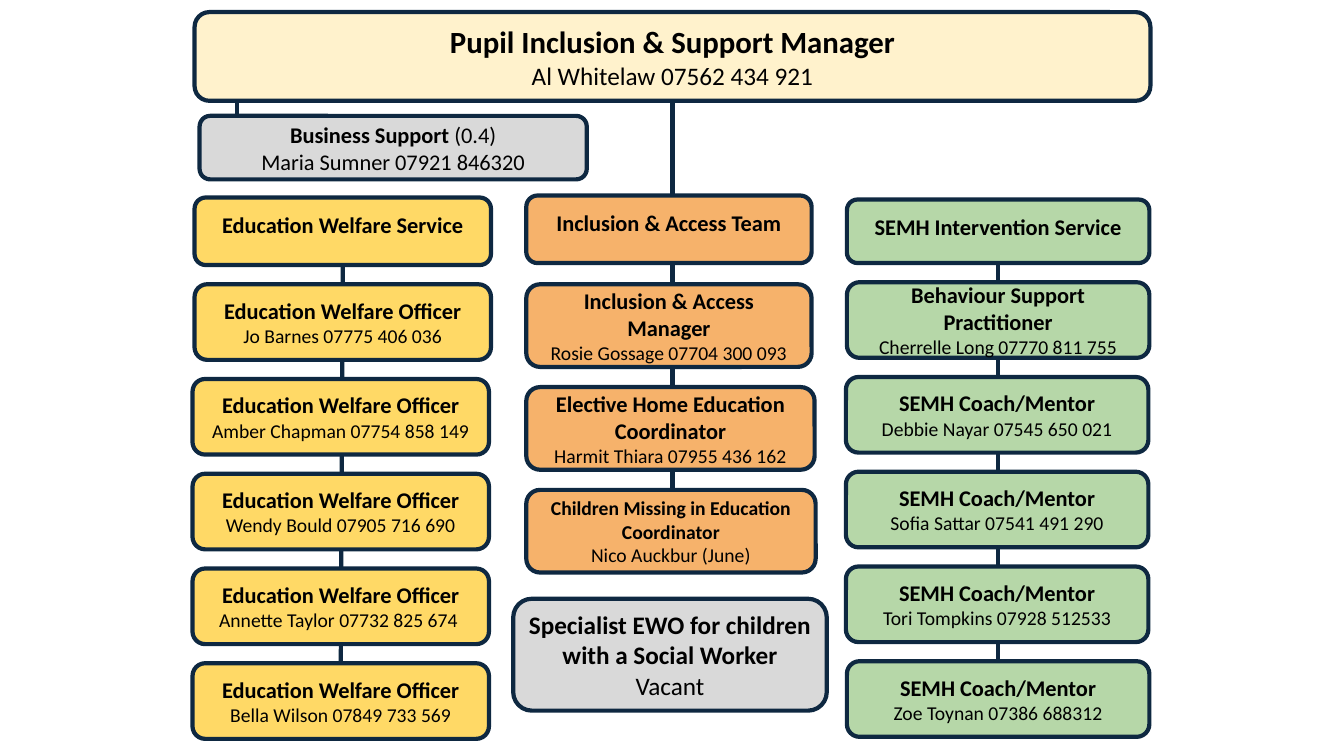
from lxml import etree
from pptx import Presentation, util as u
from pptx.dml.color import RGBColor
from pptx.enum import shapes, text as t
from pptx.oxml.ns import qn

INK = "0E2841"
hue = RGBColor.from_string


def say(shape, words, size=14, bold=False, join=False):
    frame = shape.text_frame
    para = frame.paragraphs[-1]
    if para.runs and not join:
        para = frame.add_paragraph()
    para.alignment = t.PP_ALIGN.CENTER
    para.line_spacing = 1.0
    para.space_before = u.Pt(0)
    run = para.add_run()
    run.text = words
    run.font.name = "Calibri"
    run.font.size = u.Pt(size)
    run.font.bold = bold
    run.font.color.rgb = hue("000000")


def card(left, top, wide, high, fill, anchor=t.MSO_ANCHOR.MIDDLE):
    spot = [u.Inches(n) for n in (left, top, wide, high)]
    shape = slide.shapes.add_shape(shapes.MSO_SHAPE.ROUNDED_RECTANGLE, *spot)
    shape.shadow.inherit = False
    shape.fill.solid()
    shape.fill.fore_color.rgb = hue(fill)
    shape.line.color.rgb = hue(INK)
    shape.line.width = u.Pt(3)
    frame = shape.text_frame
    frame.word_wrap = True
    frame.vertical_anchor = anchor
    frame.margin_left = frame.margin_right = u.Inches(0.1)
    frame.margin_top = frame.margin_bottom = u.Inches(0.1)
    return shape


deck = Presentation()
deck.slide_width, deck.slide_height = u.Inches(13.33), u.Inches(7.5)
slide = deck.slides.add_slide(deck.slide_layouts[5])
draw = slide.shapes.add_connector
kind = shapes.MSO_CONNECTOR

bend = draw(kind.ELBOW, u.Inches(3.34), u.Inches(1.62), u.Inches(2.35), u.Inches(0.7))
geom = bend.element.spPr.find(qn("a:prstGeom"))
geom.set("prst", "bentConnector4")
guide = geom.find(qn("a:avLst"))
for name in ("adj1", "adj2"):
    etree.SubElement(guide, qn("a:gd"), name=name, fmla="val 0")

ends = [(3.38, 6.58), (6.67, 5.11), (9.9, 6.86)]
stems = [draw(kind.STRAIGHT, u.Inches(x), 0, u.Inches(x), u.Inches(y)) for x, y in ends]
for link in [bend] + stems:
    link.line.color.rgb = hue(INK)
    link.line.width = u.Pt(3)
    etree.SubElement(link.element.spPr, qn("a:effectLst"))

boss = card(1.93, 0.12, 9.48, 0.88, "FFF2CC")
title = slide.shapes.title
title.left, title.top, title.width, title.height = boss.left, boss.top, boss.width, boss.height
title.text_frame.auto_size = t.MSO_AUTO_SIZE.NONE
title.text_frame.vertical_anchor = t.MSO_ANCHOR.MIDDLE
say(title, "Pupil Inclusion & Support Manager", size=22, bold=True)
say(title, "Al Whitelaw 07562 434 921", size=18)

aide = card(1.98, 1.15, 3.84, 0.63, "D9D9D9")
say(aide, "Business Support ", size=16, bold=True)
say(aide, "(0.4)", size=16, join=True)
say(aide, "Maria Sumner 07921 846320", size=16)

EWO, COACH = "Education Welfare Officer", "SEMH Coach/Mentor"
teams = [
    ("Education Welfare Service", "FFD966", (1.93, 1.96, 2.94, 0.67), (2.82, 0.75, 0.94), [
        (EWO, "Jo Barnes 07775 406 036", 16, 1.93, 2.94),
        (EWO, "Amber Chapman 07754 858 149", 16, 1.91, 2.94),
        (EWO, "Wendy Bould 07905 716 690", 16, 1.91, 2.94),
        (EWO, "Annette Taylor 07732 825 674 ", 16, 1.91, 2.94),
        (EWO, "Bella Wilson 07849 733 569", 16, 1.91, 2.94)]),
    ("Inclusion & Access Team", "F6B26B", (5.22, 1.94, 2.83, 0.67), (2.82, 0.82, 1.02), [
        ("Inclusion & Access Manager", "Rosie Gossage 07704 300 093", 16, 5.22, 2.83),
        ("Elective Home Education Coordinator", "Harmit Thiara 07955 436 162", 16, 5.22, 2.86),
        ("Children Missing in Education Coordinator", "Nico Auckbur (June)", 14, 5.22, 2.87)]),
    ("SEMH Intervention Service", "B6D7A8", (8.4, 1.98, 3, 0.63), (2.8, 0.75, 0.94), [
        ("Behaviour Support Practitioner", "Cherrelle Long 07770 811 755", 16, 8.4, 3),
        (COACH, "Debbie Nayar 07545 650 021", 16, 8.39, 3),
        (COACH, "Sofia Sattar 07541 491 290", 16, 8.39, 3),
        (COACH, "Tori Tompkins 07928 512533", 16, 8.39, 3),
        (COACH, "Zoe Toynan 07386 688312", 16, 8.4, 3)]),
]

heads, tails = [], []
for name, fill, spot, (first, tall, step), staff in teams:
    head = card(*spot, fill, t.MSO_ANCHOR.TOP)
    say(head, name, size=16, bold=True)
    for row, (role, who, size, left, wide) in enumerate(staff):
        post = card(left, first + row * step, wide, tall, fill)
        say(post, role, size=size, bold=True)
        say(post, who)
    heads.append(head)
    tails.append(post)

extra = card(5.09, 5.94, 3.11, 1.11, "D9D9D9")
say(extra, "Specialist EWO for children with a Social Worker", size=18, bold=True)
say(extra, "Vacant", size=18)

for stem, top in zip(stems, (heads[0], boss, heads[2])):
    stem.begin_connect(top, 2)
stems[0].end_connect(tails[0], 0)

slide.shapes.element.append(title.element)
deck.save("out.pptx")
